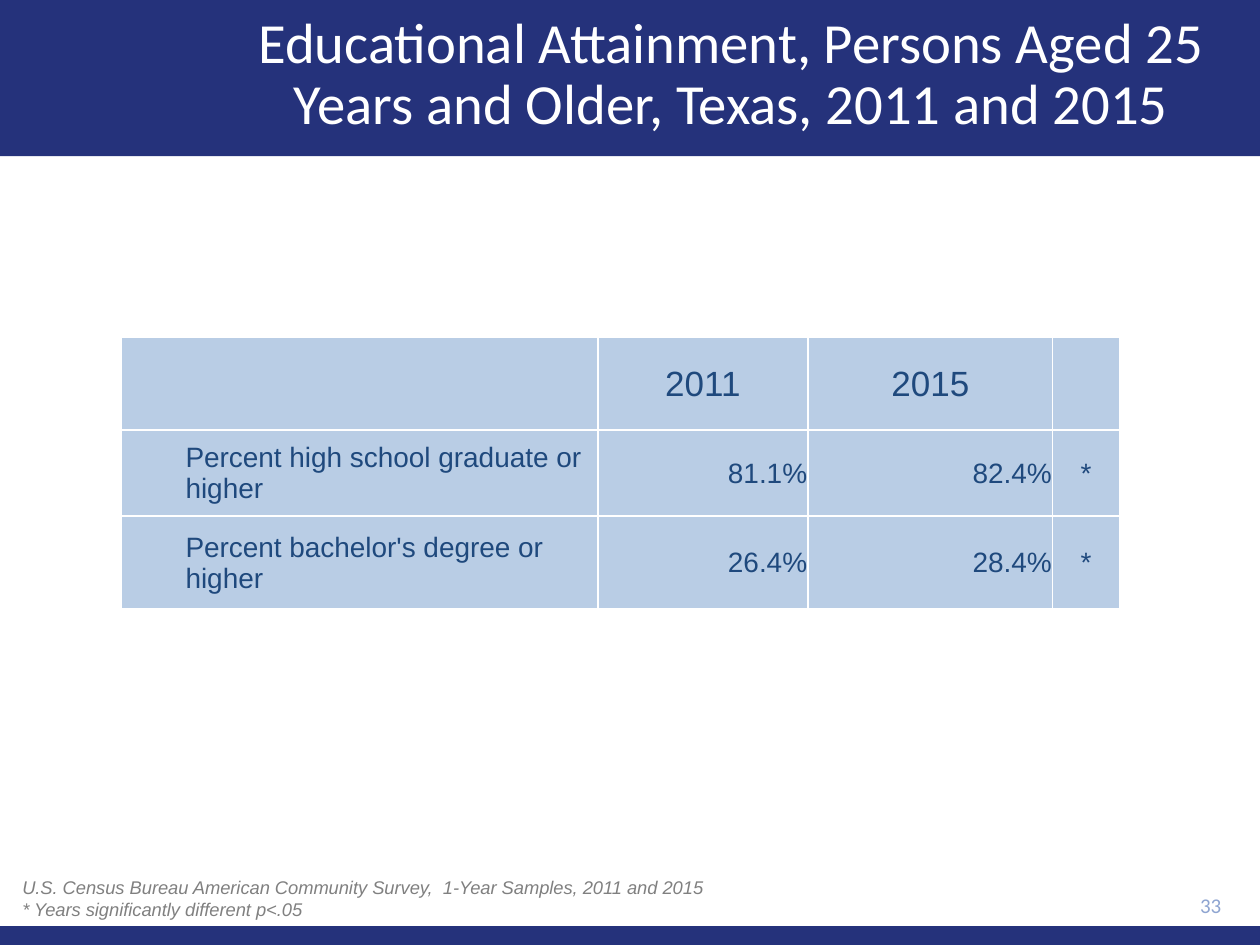
from lxml import etree
from pptx import Presentation
from pptx import util as u
from pptx.dml import color
from pptx.enum import shapes, text
from pptx.oxml import ns

NAVY, PALE, INK, WHITE = "25327B", "B9CDE5", "1F497D", "FFFFFF"
LEFT, CENTER, RIGHT = text.PP_ALIGN.LEFT, text.PP_ALIGN.CENTER, text.PP_ALIGN.RIGHT
MIDDLE = text.MSO_ANCHOR.MIDDLE

COLUMN_WIDTHS = (9.6, 4.24, 4.93, 1.35)
ROW_HEIGHTS = (1.88, 1.73, 1.88)
ROWS = (
    ("", "2011", "2015", ""),
    ("Percent high school graduate or higher", "81.1%", "82.4%", "*"),
    ("Percent bachelor's degree or higher", "26.4%", "28.4%", "*"),
)


def paint(target, value):
    if hasattr(target, "solid"):
        target.solid()
        target = target.fore_color
    target.rgb = color.RGBColor.from_string(value)


def lengths(box):
    return [u.Cm(value) for value in box]


def add_span(para, words, size, font, ink, italic=False):
    span = para.add_run()
    span.text = words
    span.font.size = u.Pt(size)
    span.font.name = font
    span.font.italic = italic
    paint(span.font.color, ink)


def add_band(page, box):
    band = page.shapes.add_shape(shapes.MSO_SHAPE.RECTANGLE, *lengths(box))
    band.shadow.inherit = False
    paint(band.fill, NAVY)
    band.line.fill.background()
    return band


def add_header(page, box):
    left, top, width, height = box
    band = add_band(page, box)
    title = page.shapes.title
    title._element.addprevious(band._element)
    title.left, title.top, title.width, title.height = lengths(
        (left + 4.32, top + 0.25, width - 4.57, height - 0.61))
    frame = title.text_frame
    frame.auto_size = text.MSO_AUTO_SIZE.NONE
    frame.word_wrap = True
    frame.vertical_anchor = MIDDLE
    para = frame.paragraphs[0]
    para.alignment = CENTER
    para.line_spacing = 0.9
    add_span(para, "Educational Attainment, Persons Aged 25 Years and Older, "
             "Texas, 2011 and 2015", 32.4, "Calibri", WHITE)


def add_borders(cell):
    properties = cell._tc.get_or_add_tcPr()
    for position, side in enumerate(("a:lnL", "a:lnR", "a:lnT", "a:lnB")):
        line = etree.Element(ns.qn(side), w=str(u.Pt(1)))
        fill = etree.SubElement(line, ns.qn("a:solidFill"))
        etree.SubElement(fill, ns.qn("a:srgbClr"), val=WHITE)
        properties.insert(position, line)


def fill_cell(cell, words, size, alignment, indent):
    paint(cell.fill, PALE)
    add_borders(cell)
    cell.vertical_anchor = MIDDLE
    cell.margin_left = cell.margin_right = cell.margin_top = u.Cm(0.02)
    cell.margin_bottom = 0
    if words:
        para = cell.text_frame.paragraphs[0]
        para.alignment = alignment
        if indent:
            para.level = 1
            para._p.get_or_add_pPr().set("marL", str(u.Cm(indent)))
        add_span(para, words, size, "Arial", INK)


def add_attainment_table(page, box):
    table = page.shapes.add_table(
        len(ROWS), len(COLUMN_WIDTHS), *lengths(box)).table
    table.first_row = table.horz_banding = False
    for column, width in zip(table.columns, COLUMN_WIDTHS):
        column.width = u.Cm(width)
    body_alignments = (LEFT, RIGHT, RIGHT, CENTER)
    for row_index, row in enumerate(ROWS):
        table.rows[row_index].height = u.Cm(ROW_HEIGHTS[row_index])
        for column_index, words in enumerate(row):
            heading = row_index == 0
            fill_cell(table.cell(row_index, column_index), words,
                      20 if heading else 16,
                      CENTER if heading else body_alignments[column_index],
                      1.27 if column_index == 0 else 0)


def add_text(page, box, lines, size, font, ink, alignment=LEFT,
             anchor=text.MSO_ANCHOR.TOP, italic=False):
    frame = page.shapes.add_textbox(*lengths(box)).text_frame
    frame.word_wrap = True
    frame.vertical_anchor = anchor
    for index, words in enumerate(lines):
        para = frame.add_paragraph() if index else frame.paragraphs[0]
        para.alignment = alignment
        add_span(para, words, size, font, ink, italic)


def add_footer(page, box):
    left, top, width, height = box
    add_band(page, (left, top + height - 0.38, width, 0.38))
    add_text(page, (left + width - 2.79, top + 0.28, 2.26, 0.86), ["33"],
             12, "Calibri", "8FA5D1", RIGHT, MIDDLE)
    add_text(page, (left + 0.2, top, 18.95, 1.14),
             ["U.S. Census Bureau American Community Survey,  "
              "1-Year Samples, 2011 and 2015",
              "* Years significantly different p<.05"],
             10.5, "Arial", "808080", italic=True)


def main():
    deck = Presentation()
    deck.slide_width, deck.slide_height = u.Cm(25.4), u.Cm(19.05)
    page = deck.slides.add_slide(deck.slide_layouts[5])
    add_header(page, (0, 0, 25.4, 3.15))
    add_attainment_table(
        page, (2.45, 6.79, sum(COLUMN_WIDTHS), sum(ROW_HEIGHTS)))
    add_footer(page, (0, 17.53, 25.4, 1.52))
    deck.save("out.pptx")


if __name__ == "__main__":
    main()
